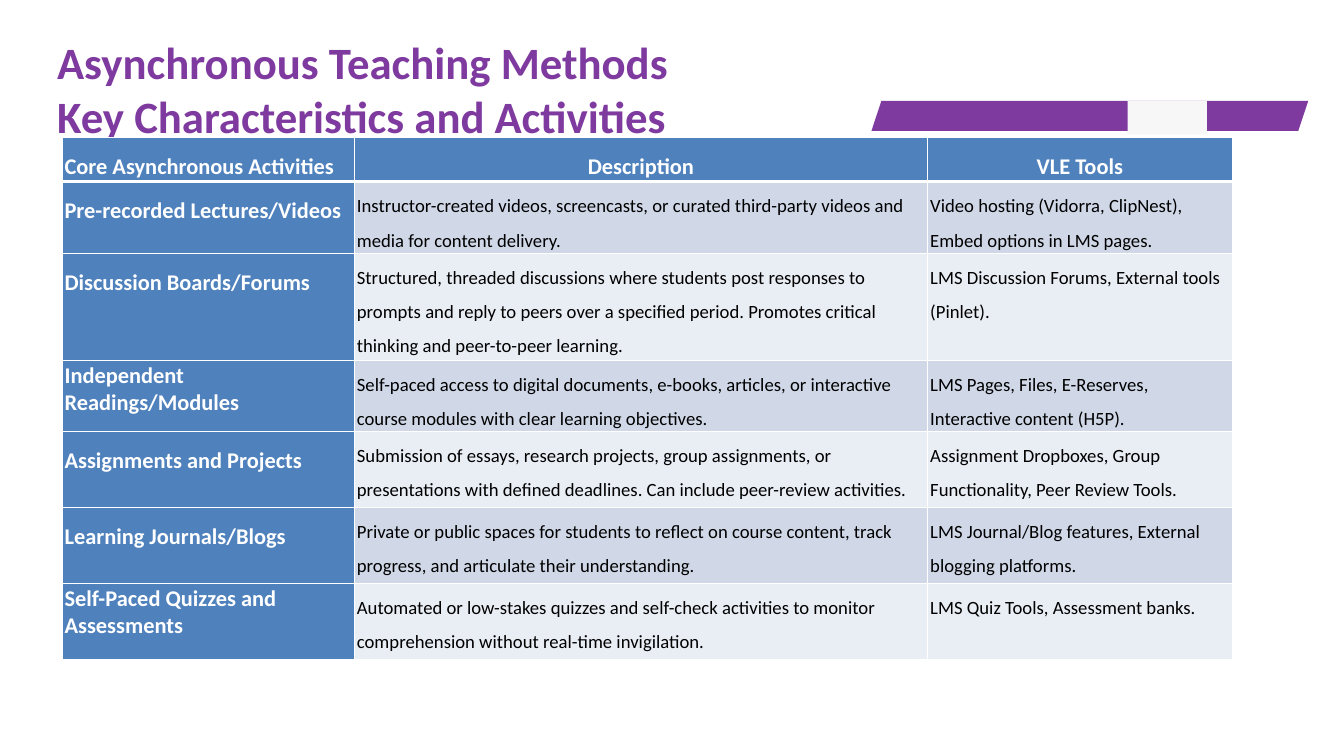
from dataclasses import dataclass

from lxml.etree import SubElement
from pptx import Presentation
from pptx.dml.color import RGBColor
from pptx.enum.shapes import MSO_SHAPE
from pptx.enum.text import MSO_ANCHOR, PP_ALIGN
from pptx.oxml.ns import qn
from pptx.util import Cm, Pt

TITLE = ("Asynchronous Teaching Methods", "Key Characteristics and Activities")
HEADS = ("Core Asynchronous Activities", "Description", "VLE Tools")

# Row height in cm, line spacing of the first cell, then the three cells
ROWS = [
    (2.08, 1.5, "Pre-recorded Lectures/Videos",
     "Instructor-created videos, screencasts, or curated third-party videos "
     "and media for content delivery.",
     "Video hosting (Vidorra, ClipNest), Embed options in LMS pages."),
    (4.04, 1.5, "Discussion Boards/Forums",
     "Structured, threaded discussions where students post responses to "
     "prompts and reply to peers over a specified period. Promotes critical "
     "thinking and peer-to-peer learning.",
     "LMS Discussion Forums, External tools (Pinlet)."),
    (2.49, 1.0, "Independent Readings/Modules",
     "Self-paced access to digital documents, e-books, articles, or "
     "interactive course modules with clear learning objectives.",
     "LMS Pages, Files, E-Reserves, Interactive content (H5P)."),
    (2.87, 1.5, "Assignments and Projects",
     "Submission of essays, research projects, group assignments, or "
     "presentations with defined deadlines. Can include peer-review activities.",
     "Assignment Dropboxes, Group Functionality, Peer Review Tools."),
    (2.87, 1.5, "Learning Journals/Blogs",
     "Private or public spaces for students to reflect on course content, "
     "track progress, and articulate their understanding.",
     "LMS Journal/Blog features, External blogging platforms."),
    (2.87, 1.0, "Self-Paced Quizzes and Assessments",
     "Automated or low-stakes quizzes and self-check activities to monitor "
     "comprehension without real-time invigilation.",
     "LMS Quiz Tools, Assessment banks."),
]
COLS = (11.05, 21.67, 11.51)
HEAD_H = 0.91


@dataclass(frozen=True)
class Theme:
    font: str = "Calibri"
    purple: str = "7F3AA0"
    pale: str = "F7F7F7"
    blue: str = "4F81BD"
    bands: tuple = ("D0D8E8", "E9EDF4")
    white: str = "FFFFFF"
    black: str = "000000"
    title: int = 48
    head: int = 24
    body: int = 20


T = Theme()


def paint(obj, color):
    obj.fill.solid()
    obj.fill.fore_color.rgb = RGBColor.from_string(color)


def style(para, size, color, bold):
    font = para.font
    font.name, font.size, font.bold = T.font, Pt(size), bold
    font.color.rgb = RGBColor.from_string(color)


def add_block(slide, kind, box, color):
    shape = slide.shapes.add_shape(kind, *map(Cm, box))
    shape.shadow.inherit = False
    shape.line.fill.background()
    paint(shape, color)
    return shape


def add_title(slide):
    box = slide.shapes.add_textbox(Cm(1.91), Cm(1.19), Cm(28.37), Cm(3.71))
    frame = box.text_frame
    frame.word_wrap = True
    frame.vertical_anchor = MSO_ANCHOR.TOP
    para = frame.paragraphs[0]
    para.text = "\v".join(TITLE)
    style(para, T.title, T.purple, True)


def add_edges(cell, top, bottom):
    """Draw white cell borders; top and bottom widths are in points."""
    props = cell._tc.get_or_add_tcPr()
    for side, width in (("L", 1), ("R", 1), ("T", top), ("B", bottom)):
        line = SubElement(props, qn(f"a:ln{side}"), w=str(Pt(width)))
        fill = SubElement(line, qn("a:solidFill"))
        SubElement(fill, qn("a:srgbClr"), val=T.white)


def fill_cell(cell, text, fill, strong, space, align, edges):
    cell.margin_left = cell.margin_right = Cm(0.1)
    cell.margin_top = cell.margin_bottom = Cm(0.08)
    add_edges(cell, *edges)
    paint(cell, fill)
    para = cell.text_frame.paragraphs[0]
    para.text = text
    para.alignment = align
    para.line_spacing = space
    if strong:
        style(para, T.head, T.white, True)
    else:
        style(para, T.body, T.black, False)


def add_grid(slide):
    rows = [(HEAD_H, 1.5, *HEADS)] + ROWS
    high = sum(row[0] for row in rows)
    grid = slide.shapes.add_table(
        len(rows), len(COLS), Cm(2.34), Cm(5.18), Cm(sum(COLS)), Cm(high)).table
    for col, width in zip(grid.columns, COLS):
        col.width = Cm(width)
    for r, (height, space, *texts) in enumerate(rows):
        grid.rows[r].height = Cm(height)
        edges = (3 if r == 1 else 1, 3 if r == 0 else 1)
        for c, text in enumerate(texts):
            strong = r == 0 or c == 0
            fill = T.blue if strong else T.bands[(r - 1) % 2]
            align = PP_ALIGN.CENTER if r == 0 and c else PP_ALIGN.LEFT
            fill_cell(grid.cell(r, c), text, fill, strong,
                      1.5 if c else space, align, edges)


def main():
    deck = Presentation()
    deck.slide_width, deck.slide_height = Cm(50.8), Cm(28.58)
    slide = deck.slides.add_slide(deck.slide_layouts[6])
    band = add_block(slide, MSO_SHAPE.PARALLELOGRAM,
                     (32.94, 3.81, 16.51, 1.14), T.purple)
    band.adjustments[0] = 0.33
    add_block(slide, MSO_SHAPE.RECTANGLE, (42.62, 3.81, 3, 1.27), T.pale)
    add_title(slide)
    add_grid(slide)
    deck.save("out.pptx")


if __name__ == "__main__":
    main()
